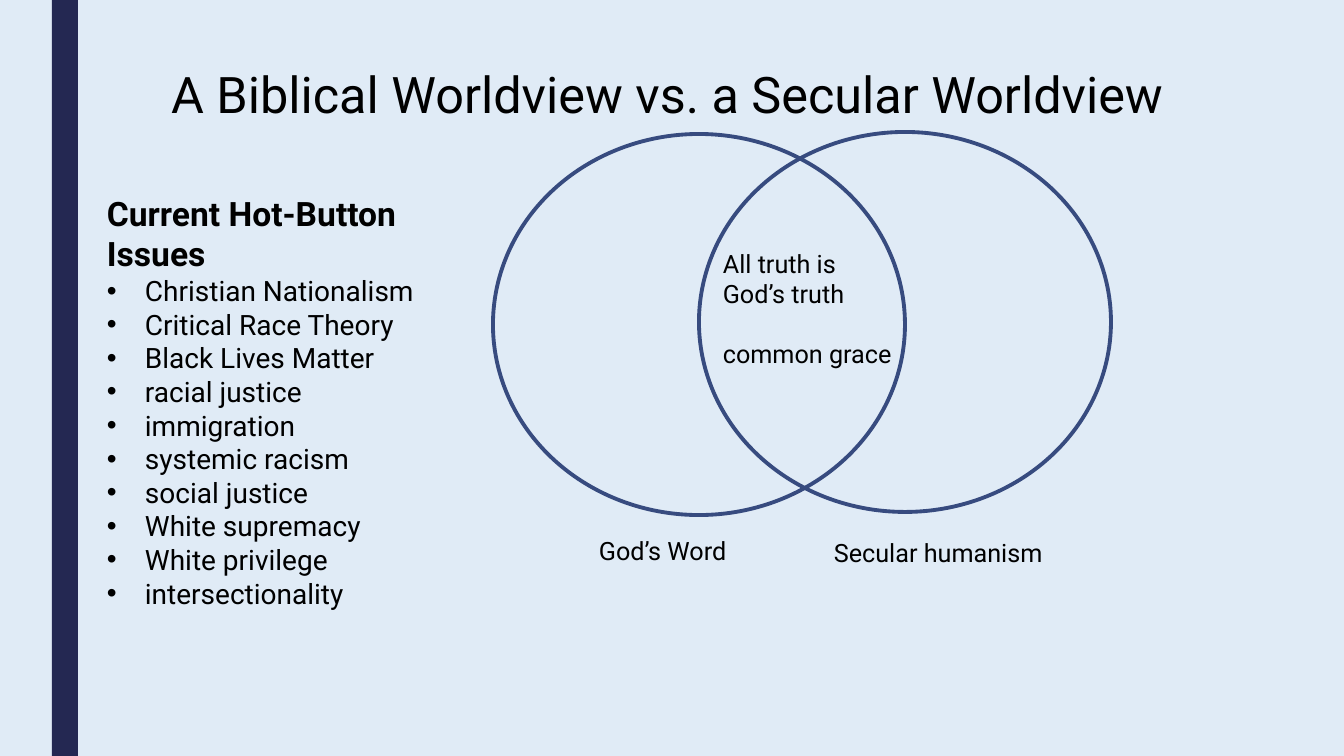
from lxml.etree import SubElement
from pptx import Presentation
from pptx.dml.color import RGBColor
from pptx.enum.shapes import MSO_SHAPE
from pptx.enum.text import MSO_ANCHOR, PP_ALIGN
from pptx.oxml.ns import qn
from pptx.util import Pt

# Content: boxes are left, top, width, height in px
TITLE = ("A Biblical Worldview vs. a Secular Worldview", (161, 58, 1104, 72))
ISSUES_HEADING = "Current Hot-Button Issues"
ISSUES = [
    "Christian Nationalism",
    "Critical Race Theory",
    "Black Lives Matter",
    "racial justice",
    "immigration",
    "systemic racism",
    "social justice",
    "White supremacy",
    "White privilege",
    "intersectionality",
]
ISSUES_BOX = (97, 188, 368, 430)
CIRCLES = [(493, 134, 412, 381), (699, 132, 412, 380)]
LABELS = [
    (["God’s Word"], (589, 530, 182, 40)),
    (["Secular humanism"], (824, 532, 286, 40)),
    (["All truth is God’s truth", "common grace"], (713, 243, 192, 132)),
]
BAR = (52, 0, 26, 756)
COLORS = {"background": "E0EBF6", "bar": "242852", "circle": "374B7F", "text": "000000"}
FONT = "Roboto"
BULLET_INDENT = 38
LABEL_GAP = Pt(21.4)

SCALE = 914400 / 100.8


def px(length):
    return round(length * SCALE)


def color(name):
    return RGBColor.from_string(COLORS[name])


def set_font(paragraph, size, bold=False):
    paragraph.font.name = FONT
    paragraph.font.size = Pt(size)
    paragraph.font.bold = bold
    paragraph.font.color.rgb = color("text")


def add_bullet(paragraph):
    properties = paragraph._p.get_or_add_pPr()
    properties.set("marL", str(px(BULLET_INDENT)))
    properties.set("indent", str(-px(BULLET_INDENT)))
    SubElement(properties, qn("a:buFont"), typeface="Arial")
    SubElement(properties, qn("a:buChar"), char="•")


def add_text(slide, lines, box):
    frame = slide.shapes.add_textbox(*map(px, box)).text_frame
    frame.word_wrap = True
    frame.text = "\n".join(lines)
    return frame.paragraphs


def add_plain_shape(slide, kind, box):
    shape = slide.shapes.add_shape(kind, *map(px, box))
    shape.shadow.inherit = False
    return shape


presentation = Presentation()
presentation.slide_width, presentation.slide_height = px(1344), px(756)
slide = presentation.slides.add_slide(presentation.slide_layouts[5])
slide.background.fill.solid()
slide.background.fill.fore_color.rgb = color("background")

# Title
title = slide.shapes.title
title_text, title_box = TITLE
title.left, title.top, title.width, title.height = map(px, title_box)
title.text_frame.text = title_text
title.text_frame.vertical_anchor = MSO_ANCHOR.TOP
title.text_frame.paragraphs[0].alignment = PP_ALIGN.LEFT
set_font(title.text_frame.paragraphs[0], 36)

# Side bar
bar = add_plain_shape(slide, MSO_SHAPE.RECTANGLE, BAR)
bar.fill.solid()
bar.fill.fore_color.rgb = color("bar")
bar.line.fill.background()

# Issues list
heading, *issues = add_text(slide, [ISSUES_HEADING, *ISSUES], ISSUES_BOX)
set_font(heading, 24, bold=True)
for paragraph in issues:
    add_bullet(paragraph)
    set_font(paragraph, 20)

# Overlapping circles
for box in CIRCLES:
    circle = add_plain_shape(slide, MSO_SHAPE.OVAL, box)
    circle.fill.background()
    circle.line.color.rgb = color("circle")
    circle.line.width = Pt(2.75)

# Circle labels
for lines, box in LABELS:
    for index, paragraph in enumerate(add_text(slide, lines, box)):
        set_font(paragraph, 18)
        if index:
            paragraph.space_before = LABEL_GAP

presentation.save("out.pptx")
